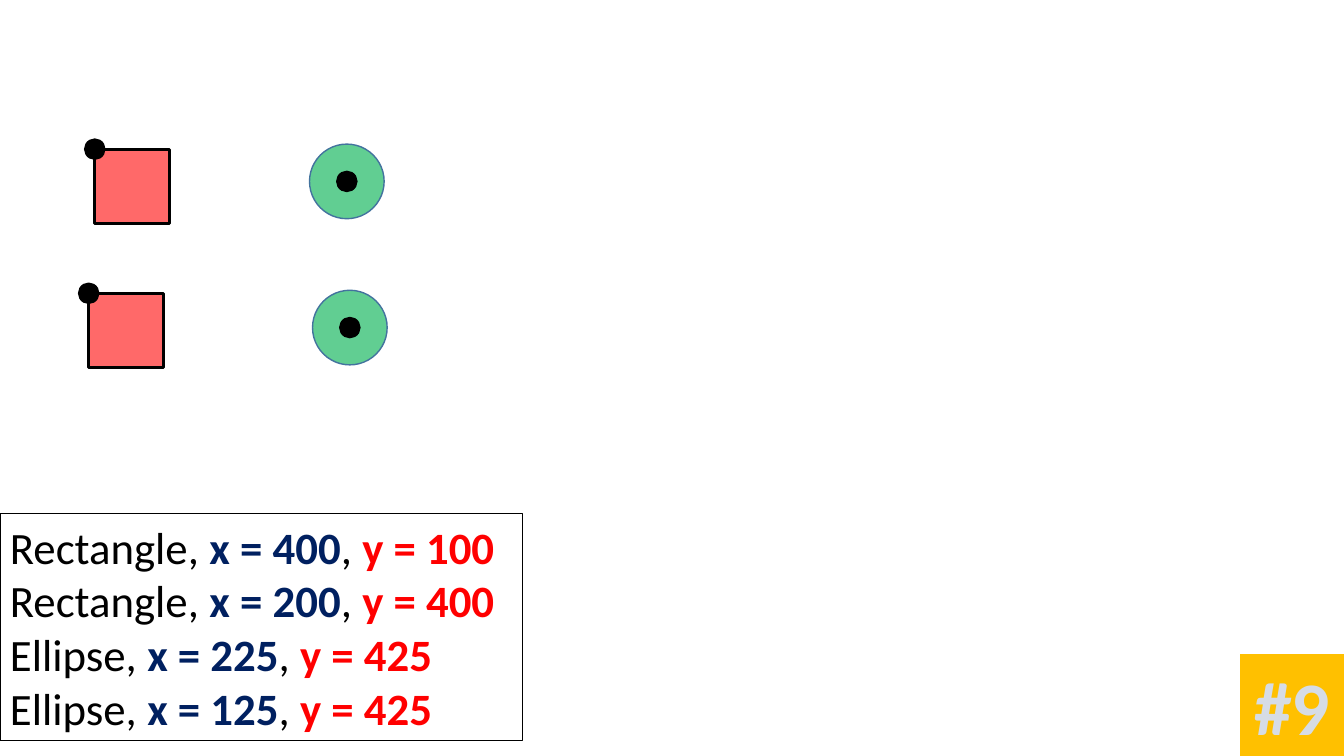
"""Build the slide that matches shapes with their coordinates."""
from dataclasses import dataclass

import lxml.etree
import pptx
import pptx.dml.color
import pptx.enum.shapes
import pptx.enum.text
import pptx.oxml.ns
import pptx.util

Inches = pptx.util.Inches
SHAPES = pptx.enum.shapes.MSO_SHAPE
ALIGN = pptx.enum.text.PP_ALIGN


@dataclass(frozen=True)
class Theme:
    """Colours, font and type sizes of the slide."""
    font: str = "Calibri"
    body_size: int = 32
    badge_size: int = 54
    ink: str = "000000"
    x_color: str = "002060"
    red: str = "FF0000"
    green: str = "00B050"
    ellipse_line: str = "43739E"
    badge_fill: str = "FFC000"
    badge_text: str = "D6DCE5"


THEME = Theme()
SHAPE_SIZE = 0.74
DOT_SIZE = 0.2
COORDINATES = [
    ("Rectangle", 400, 100),
    ("Rectangle", 200, 400),
    ("Ellipse", 225, 425),
    ("Ellipse", 125, 425),
]
RECTANGLE_CORNERS = [(0.94, 1.48), (0.88, 2.91)]
ELLIPSE_CORNERS = [(3.1, 2.88), (3.07, 1.43)]


def rgb(color):
    """Return the colour object of a hex value."""
    return pptx.dml.color.RGBColor.from_string(color)


def add_box(shapes, kind, box, fill=None, opacity=100, line=None, line_width=1):
    """Add a preset shape at box (left, top, width, height)."""
    shape = shapes.add_shape(kind, *map(Inches, box))
    shape.shadow.inherit = False
    if fill:
        shape.fill.solid()
        shape.fill.fore_color.rgb = rgb(fill)
        if opacity < 100:
            tag = pptx.oxml.ns.qn("a:srgbClr")
            color = next(shape.element.spPr.iter(tag))
            alpha = lxml.etree.SubElement(color, pptx.oxml.ns.qn("a:alpha"))
            alpha.set("val", str(opacity * 1000))
    else:
        shape.fill.background()
    if line:
        shape.line.color.rgb = rgb(line)
        shape.line.width = pptx.util.Pt(line_width)
    else:
        shape.line.fill.background()
    return shape


def add_text(paragraph, text, size=THEME.body_size, color=THEME.ink, bold=False):
    """Add a formatted run to a paragraph."""
    run = paragraph.add_run()
    run.text = text
    run.font.name = THEME.font
    run.font.size = pptx.util.Pt(size)
    run.font.bold = bold
    run.font.color.rgb = rgb(color)


def prepare_frame(shape, wrap):
    """Return the text frame of a shape that grows with its text."""
    frame = shape.text_frame
    frame.word_wrap = wrap
    frame.auto_size = pptx.enum.text.MSO_AUTO_SIZE.SHAPE_TO_FIT_TEXT
    return frame


def add_coordinate_list(slide, box):
    """Add the outlined list of shape names and coordinates."""
    shape = add_box(slide.shapes, SHAPES.RECTANGLE, box, line=THEME.ink, line_width=0.75)
    frame = prepare_frame(shape, wrap=True)
    for index, (name, x, y) in enumerate(COORDINATES):
        paragraph = frame.add_paragraph() if index else frame.paragraphs[0]
        paragraph.alignment = ALIGN.LEFT
        add_text(paragraph, f"{name}, ")
        add_text(paragraph, f"x = {x}", color=THEME.x_color, bold=True)
        add_text(paragraph, ", ")
        add_text(paragraph, f"y = {y}", color=THEME.red, bold=True)


def add_marked_shape(slide, kind, corner, anchor, **style):
    """Add a grouped shape with a dot centred at an anchor fraction of its size."""
    group = slide.shapes.add_group_shape()
    left, top = corner
    add_box(group.shapes, kind, (left, top, SHAPE_SIZE, SHAPE_SIZE), **style)
    shift = anchor * SHAPE_SIZE - DOT_SIZE / 2
    dot = (left + shift, top + shift, DOT_SIZE, DOT_SIZE)
    add_box(group.shapes, SHAPES.OVAL, dot, fill=THEME.ink, line=THEME.ink)


def add_number_badge(slide, box, text):
    """Add the slide number badge."""
    shape = add_box(slide.shapes, SHAPES.RECTANGLE, box, fill=THEME.badge_fill)
    paragraph = prepare_frame(shape, wrap=False).paragraphs[0]
    paragraph.alignment = ALIGN.CENTER
    add_text(paragraph, text, size=THEME.badge_size, color=THEME.badge_text, bold=True)


def main():
    """Build and save the presentation."""
    presentation = pptx.Presentation()
    presentation.slide_width = Inches(13.33)
    presentation.slide_height = Inches(7.5)
    slide = presentation.slides.add_slide(presentation.slide_layouts[6])
    add_coordinate_list(slide, (0, 5.09, 5.18, 2.26))
    for corner in RECTANGLE_CORNERS:
        add_marked_shape(slide, SHAPES.RECTANGLE, corner, anchor=0, fill=THEME.red,
                         opacity=59, line=THEME.ink, line_width=2.25)
    for corner in ELLIPSE_CORNERS:
        add_marked_shape(slide, SHAPES.OVAL, corner, anchor=0.5, fill=THEME.green,
                         opacity=62, line=THEME.ellipse_line)
    add_number_badge(slide, (12.3, 6.49, 1.03, 1.01), "#9")
    presentation.save("out.pptx")


if __name__ == "__main__":
    main()
